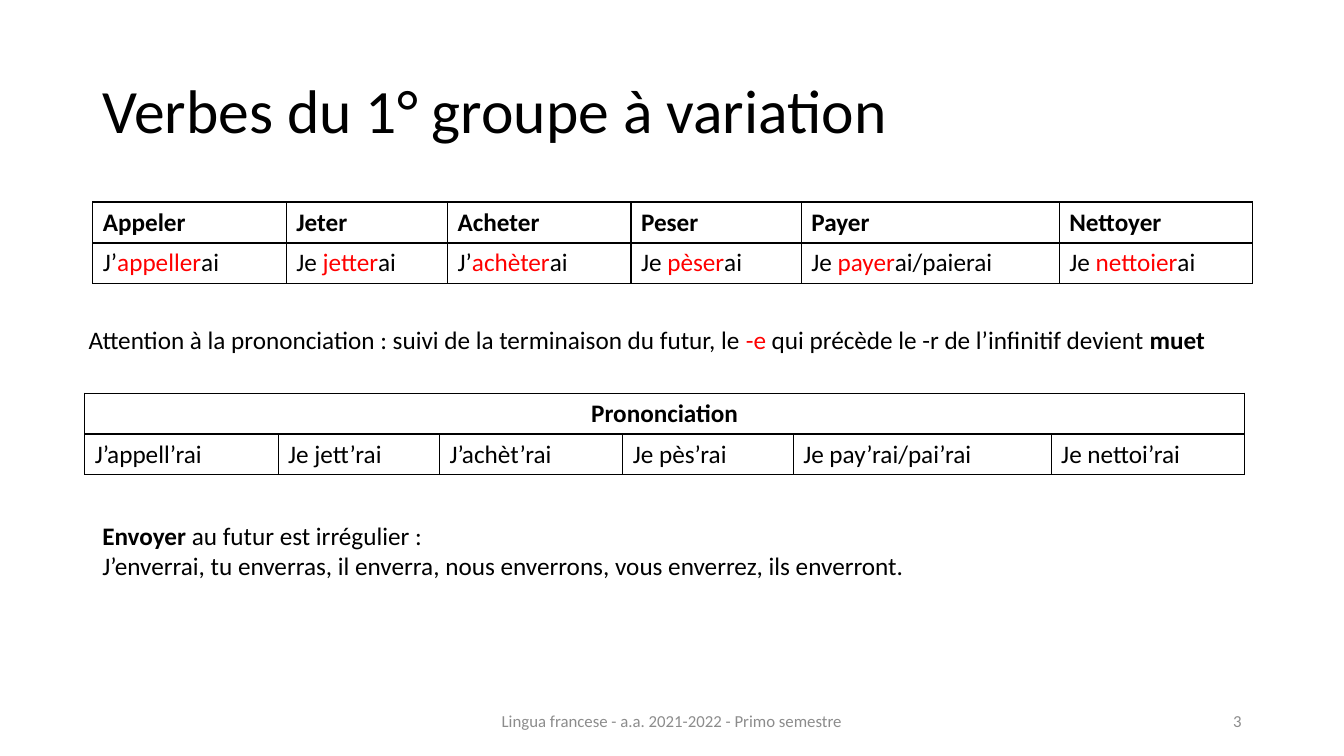
from lxml.etree import SubElement
from pptx import Presentation
from pptx.dml.color import RGBColor
from pptx.enum.text import MSO_ANCHOR, PP_ALIGN
from pptx.oxml.ns import qn
from pptx.util import Pt

BLACK = RGBColor(0x00, 0x00, 0x00)
RED = RGBColor(0xFF, 0x00, 0x00)
GREY = RGBColor(0x8C, 0x8C, 0x8C)
WHITE = RGBColor(0xFF, 0xFF, 0xFF)
FONT = "Calibri"
BOLD = {"bold": True}
ACCENT = {"color": RED}

TITLE = "Verbes du 1° groupe à variation"
VERBS = [
    ("Appeler", "J’", "appeller", "ai", "J’appell’rai"),
    ("Jeter", "Je ", "jetter", "ai", "Je jett’rai"),
    ("Acheter", "J’", "achèter", "ai", "J’achèt’rai"),
    ("Peser", "Je ", "pèser", "ai", "Je pès’rai"),
    ("Payer", "Je ", "payer", "ai/paierai", "Je pay’rai/pai’rai"),
    ("Nettoyer", "Je ", "nettoier", "ai", "Je nettoi’rai"),
]
PRONUNCIATION = "Prononciation"
WARNING = [[
    ("Attention à la prononciation : suivi de la terminaison du futur, le ", {}),
    ("-e ", ACCENT),
    ("qui précède le -r de l’infinitif devient ", {}),
    ("muet", BOLD),
]]
IRREGULAR = [
    [("Envoyer", BOLD), (" au futur est irrégulier :", {})],
    [("J’enverrai, tu enverras, il enverra, nous enverrons, vous enverrez, ils enverront.", {})],
]
FOOTER = "Lingua francese - a.a. 2021-2022 - Primo semestre"
PAGE_NUMBER = "3"

COLUMN_WIDTHS = [138.2, 115.2, 131, 121.7, 184.3, 138.2]
ROW_HEIGHT = 29.2


def write(frame, paragraphs, size=18, color=BLACK, bold=False, align=PP_ALIGN.LEFT, anchor=MSO_ANCHOR.TOP):
    if isinstance(paragraphs, str):
        paragraphs = [[(paragraphs, {})]]
    frame.word_wrap = True
    frame.vertical_anchor = anchor
    for index, spans in enumerate(paragraphs):
        para = frame.add_paragraph() if index else frame.paragraphs[0]
        para.alignment = align
        for text, style in spans:
            span = para.add_run()
            span.text = text
            span.font.name = FONT
            span.font.size = Pt(size)
            span.font.bold = style.get("bold", bold)
            span.font.color.rgb = style.get("color", color)


def add_text(page, left, top, width, height, paragraphs, **style):
    box = page.shapes.add_textbox(Pt(left), Pt(top), Pt(width), Pt(height))
    write(box.text_frame, paragraphs, **style)


def set_borders(cell):
    properties = cell._tc.get_or_add_tcPr()
    for index, side in enumerate(("lnL", "lnR", "lnT", "lnB")):
        line = properties.makeelement(qn(f"a:{side}"), {"w": str(Pt(1))})
        fill = SubElement(line, qn("a:solidFill"))
        SubElement(fill, qn("a:srgbClr"), val=str(BLACK))
        properties.insert(index, line)


def add_grid(page, left, top):
    frame = page.shapes.add_table(
        2, len(COLUMN_WIDTHS), Pt(left), Pt(top), Pt(sum(COLUMN_WIDTHS)), Pt(2 * ROW_HEIGHT)
    )
    grid = frame.table
    for column, width in zip(grid.columns, COLUMN_WIDTHS):
        column.width = Pt(width)
    for row in grid.rows:
        row.height = Pt(ROW_HEIGHT)
    for cell in grid.iter_cells():
        cell.fill.solid()
        cell.fill.fore_color.rgb = WHITE
        set_borders(cell)
    return grid


def main():
    deck = Presentation()
    deck.slide_width, deck.slide_height = Pt(960), Pt(540)
    page = deck.slides.add_slide(deck.slide_layouts[5])

    title = page.shapes.title
    title.left, title.top, title.width, title.height = Pt(66), Pt(28.75), Pt(828), Pt(104.4)
    write(title.text_frame, TITLE, size=44, anchor=MSO_ANCHOR.MIDDLE)
    title.text_frame.paragraphs[0].line_spacing = 0.9

    futures = add_grid(page, 66.3, 144.3)
    sounds = add_grid(page, 60.5, 280.8)
    sounds.cell(0, 0).merge(sounds.cell(0, len(VERBS) - 1))
    write(sounds.cell(0, 0).text_frame, PRONUNCIATION, bold=True, align=PP_ALIGN.CENTER)
    for column, (verb, pronoun, stem, ending, sound) in enumerate(VERBS):
        write(futures.cell(0, column).text_frame, verb, bold=True)
        future = [[(pronoun, {}), (stem, ACCENT), (ending, {})]]
        write(futures.cell(1, column).text_frame, future)
        write(sounds.cell(1, column).text_frame, sound)

    add_text(page, 56.2, 227.8, 818.6, 29.1, WARNING)
    add_text(page, 66, 368.2, 828, 50.9, IRREGULAR)
    small = {"size": 12, "color": GREY, "anchor": MSO_ANCHOR.MIDDLE}
    add_text(page, 318, 500.5, 324, 28.75, FOOTER, align=PP_ALIGN.CENTER, **small)
    add_text(page, 678, 500.5, 216, 28.75, PAGE_NUMBER, align=PP_ALIGN.RIGHT, **small)

    deck.save("out.pptx")


if __name__ == "__main__":
    main()
